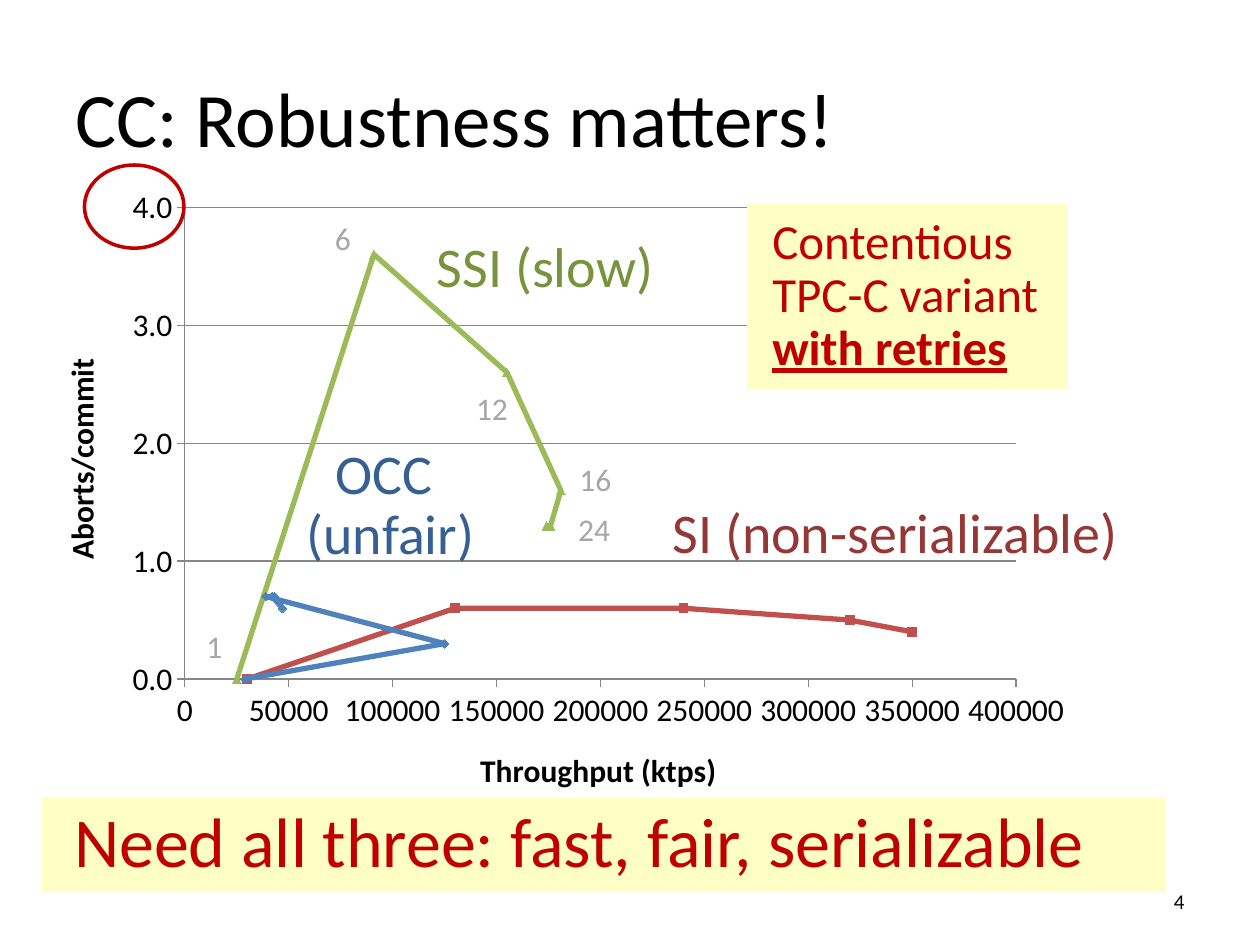
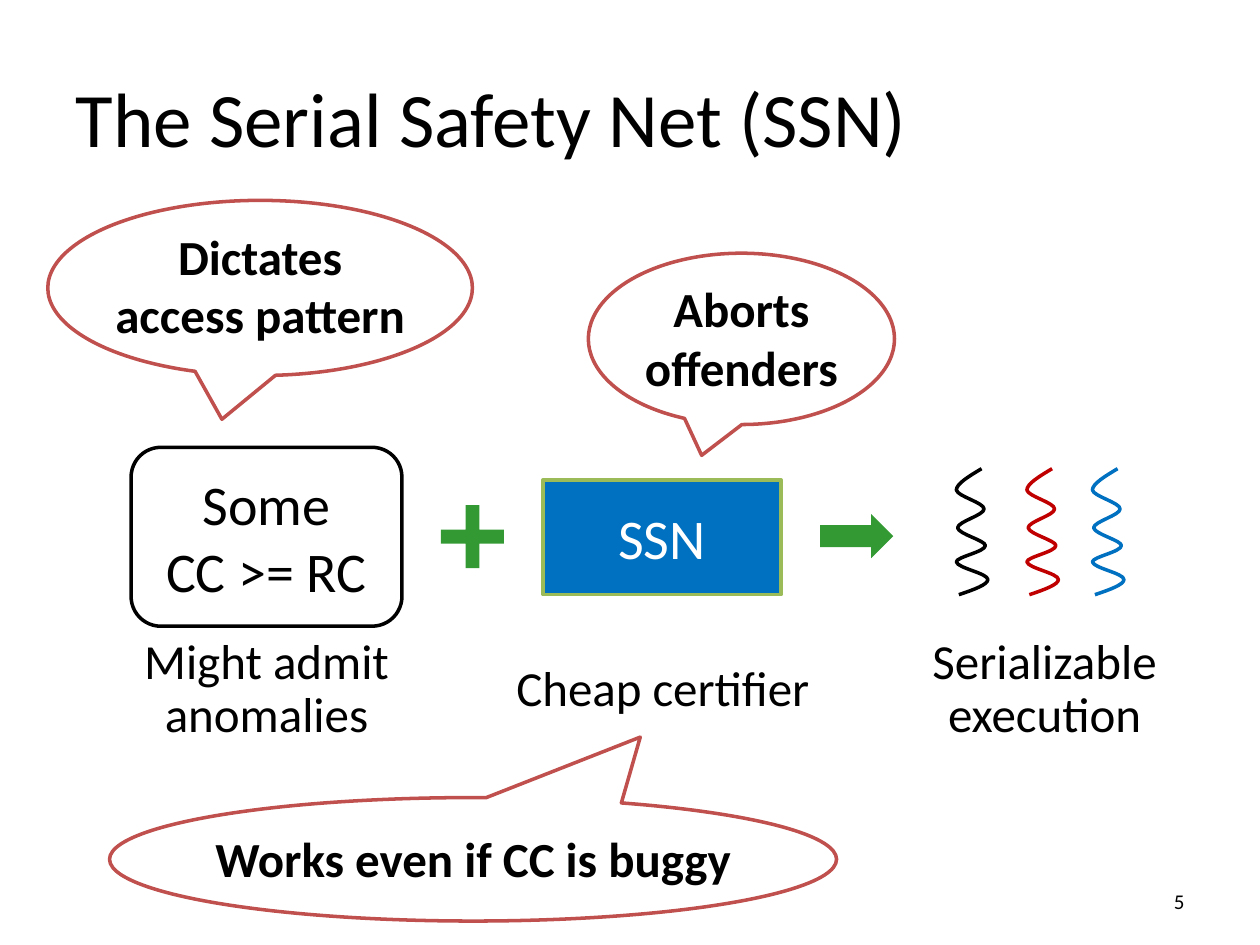
"""Build two slides on concurrency control: robustness and the Serial Safety Net."""
from lxml import etree
from pptx import Presentation
from pptx.chart.data import XyChartData
from pptx.dml.color import RGBColor
from pptx.enum.chart import XL_CHART_TYPE, XL_MARKER_STYLE, XL_TICK_MARK
from pptx.enum.shapes import MSO_SHAPE
from pptx.enum.text import MSO_ANCHOR, PP_ALIGN
from pptx.oxml.ns import qn
from pptx.util import Inches, Pt

FONT = "Calibri"
BLACK = RGBColor(0x00, 0x00, 0x00)
WHITE = RGBColor(0xFF, 0xFF, 0xFF)
GRAY = RGBColor(0xA6, 0xA6, 0xA6)
GRID = RGBColor(0x86, 0x86, 0x86)
RED = RGBColor(0xC0, 0x00, 0x00)
BLUE = RGBColor(0x00, 0x70, 0xC0)
GREEN = RGBColor(0x33, 0x99, 0x33)
YELLOW = RGBColor(0xFF, 0xFF, 0xC5)
OCC_LINE = RGBColor(0x4F, 0x81, 0xBD)
SI_LINE = RGBColor(0xC0, 0x50, 0x4D)
SSI_LINE = RGBColor(0x9B, 0xBB, 0x59)
OCC_TEXT = RGBColor(0x37, 0x60, 0x92)
SI_TEXT = RGBColor(0x95, 0x37, 0x35)
SSI_TEXT = RGBColor(0x77, 0x93, 0x3C)


def write(sp, text, size=18, color=BLACK, bold=False, align=PP_ALIGN.LEFT,
          anchor=MSO_ANCHOR.MIDDLE, spacing=1.0, margins=(0.1, 0.05), wrap=True):
    """Fill a shape with formatted text and return its last paragraph."""
    tf = sp.text_frame
    tf.text = text
    tf.word_wrap = wrap
    tf.vertical_anchor = anchor
    tf.margin_left = tf.margin_right = Inches(margins[0])
    tf.margin_top = tf.margin_bottom = Inches(margins[1])
    for p in tf.paragraphs:
        p.alignment = align
        p.line_spacing = spacing
        for r in p.runs:
            r.font.name = FONT
            r.font.size = Pt(size)
            r.font.bold = bold
            r.font.color.rgb = color
    return p


def add_box(s, at, kind=None, fill=None, line=None, adj=()):
    """Add a preset shape, or a text box when no kind is given."""
    box = [Inches(v) for v in at]
    if kind is None:
        return s.shapes.add_textbox(*box)
    sp = s.shapes.add_shape(kind, *box)
    sp.shadow.inherit = False
    for i, value in enumerate(adj):
        sp.adjustments[i] = value
    if fill is None:
        sp.fill.background()
    else:
        sp.fill.solid()
        sp.fill.fore_color.rgb = fill
    if line is None:
        sp.line.fill.background()
    else:
        sp.line.color.rgb = line
        sp.line.width = Pt(2)
    return sp


prs = Presentation()
prs.slide_width, prs.slide_height = Inches(10), Inches(7.5)

slides = []
for number, title in ((4, "CC: Robustness matters!"), (5, "The Serial Safety Net (SSN)")):
    s = prs.slides.add_slide(prs.slide_layouts[5])
    sp = s.shapes.title
    sp.left, sp.top, sp.width, sp.height = [Inches(v) for v in (0.5, 0.3, 9, 1.25)]
    write(sp, title, size=44)
    write(add_box(s, (7.17, 6.95, 2.33, 0.4)), str(number), size=12, align=PP_ALIGN.RIGHT)
    slides.append(s)
robustness, safety_net = slides

curves = (
    ("Series 1", OCC_LINE, XL_MARKER_STYLE.DIAMOND,
     (29000, 125000, 39000, 43000, 47000, 42000), (0, 0.3, 0.7, 0.7, 0.6, 0.7)),
    ("Series 2", SI_LINE, XL_MARKER_STYLE.SQUARE,
     (30000, 130000, 240000, 320000, 350000, 350000), (0, 0.6, 0.6, 0.5, 0.4, 0.4)),
    ("Series 3", SSI_LINE, XL_MARKER_STYLE.TRIANGLE,
     (25000, 91000, 155000, 181000, 176000, 174000), (0, 3.6, 2.6, 1.6, 1.3, 1.3)),
)
data = XyChartData()
for name, _, _, throughputs, aborts in curves:
    series = data.add_series(name)
    for x, y in zip(throughputs, aborts):
        series.add_data_point(x, y)
chart = robustness.shapes.add_chart(
    XL_CHART_TYPE.XY_SCATTER_LINES, *[Inches(v) for v in (0.12, 1.34, 8.58, 5.35)], data).chart
chart.has_title = chart.has_legend = False
chart.plots[0].vary_by_categories = False
chart.font.name, chart.font.size = FONT, Pt(18)
chart.font.color.rgb = BLACK
for series, (_, color, marker, _, _) in zip(chart.plots[0].series, curves):
    series.smooth = False
    series.format.line.color.rgb = color
    series.format.line.width = Pt(3)
    series.marker.style, series.marker.size = marker, 5
    series.marker.format.fill.solid()
    series.marker.format.fill.fore_color.rgb = color
    series.marker.format.line.color.rgb = color

axes = ((chart.category_axis, "Throughput (ktps)", 400000, 50000, "General"),
        (chart.value_axis, "Aborts/commit", 4, 1, "#,##0.0"))
for axis, title, top, step, number_format in axes:
    axis.minimum_scale, axis.maximum_scale, axis.major_unit = 0, top, step
    axis.major_tick_mark = XL_TICK_MARK.OUTSIDE
    axis.minor_tick_mark = XL_TICK_MARK.NONE
    axis.tick_labels.number_format = number_format
    axis.tick_labels.number_format_is_linked = False
    axis.format.line.color.rgb = GRID
    axis.has_major_gridlines = axis is axes[1][0]
    tf = axis.axis_title.text_frame
    tf.text = title
    font = tf.paragraphs[0].runs[0].font
    font.name, font.size, font.bold = FONT, Pt(18), True
    font.color.rgb = BLACK
chart.value_axis.major_gridlines.format.line.color.rgb = GRID

plot_area = chart._chartSpace.find(".//" + qn("c:plotArea"))
body = plot_area.findall(qn("c:valAx"))[1].find(qn("c:title")).find(".//" + qn("a:bodyPr"))
body.set("rot", "-5400000")
body.set("vert", "horz")
for layout in plot_area.findall(qn("c:layout")):
    plot_area.remove(layout)
layout = etree.Element(qn("c:layout"))
manual = etree.SubElement(layout, qn("c:manualLayout"))
for tag, value in (("layoutTarget", "inner"), ("xMode", "edge"), ("yMode", "edge"),
                   ("x", "0.157"), ("y", "0.057"), ("w", "0.769"), ("h", "0.7")):
    etree.SubElement(manual, qn("c:" + tag)).set("val", value)
plot_area.insert(0, layout)

for text, at, color, align in (
        ("OCC \v(unfair)", (2.32, 3.44, 1.56, 1.17), OCC_TEXT, PP_ALIGN.CENTER),
        ("SI (non-serializable)", (5.24, 3.91, 3.78, 0.69), SI_TEXT, PP_ALIGN.LEFT),
        ("SSI (slow)", (3.37, 1.8, 1.94, 0.69), SSI_TEXT, PP_ALIGN.LEFT)):
    write(add_box(robustness, at), text, size=32, color=color, align=align,
          anchor=MSO_ANCHOR.TOP, spacing=0.9, margins=(0.1, 0.1), wrap=False)

for threads, left, top in ((24, 4.49, 4), (16, 4.5, 3.6), (6, 2.56, 1.69),
                           (12, 3.68, 3.04), (1, 1.54, 4.93)):
    width = 0.46 if threads > 9 else 0.33
    write(add_box(robustness, (left, top, width, 0.4)), str(threads), color=GRAY,
          anchor=MSO_ANCHOR.TOP, wrap=False)

sp = add_box(robustness, (0.33, 6.33, 8.92, 0.75), MSO_SHAPE.RECTANGLE, YELLOW)
write(sp, "Need all three: fast, fair, serializable", size=40, color=RED,
      spacing=0.9, margins=(0.26, 0.05))

sp = add_box(robustness, (5.93, 1.62, 2.54, 1.47), MSO_SHAPE.RECTANGLE, YELLOW)
p = write(sp, "Contentious \vTPC-C variant\v", size=28, color=RED, spacing=0.9,
          margins=(0.2, 0.1), wrap=False)
r = p.add_run()
r.text = "with retries"
r.font.name, r.font.size, r.font.bold, r.font.underline = FONT, Pt(28), True, True
r.font.color.rgb = RED

add_box(robustness, (0.67, 1.31, 0.79, 0.66), MSO_SHAPE.OVAL, line=RED)

sp = add_box(safety_net, (1.04, 3.55, 2.15, 1.42), MSO_SHAPE.ROUNDED_RECTANGLE, WHITE, BLACK)
write(sp, "Some\nCC >= RC", size=32, align=PP_ALIGN.CENTER)
add_box(safety_net, (3.5, 4.01, 0.5, 0.5), MSO_SHAPE.CROSS, GREEN, adj=(0.39,))
sp = add_box(safety_net, (4.31, 3.81, 1.89, 0.91), MSO_SHAPE.RECTANGLE, BLUE, SSI_LINE)
write(sp, "SSN", size=32, color=WHITE, align=PP_ALIGN.CENTER, margins=(0, 0.05))
add_box(safety_net, (6.51, 4.08, 0.58, 0.35), MSO_SHAPE.RIGHT_ARROW, GREEN)

wave = ((0.2, 0), (0.1, 0.06), (0, 0.12), (0, 0.17), (0.01, 0.22), (0.22, 0.27), (0.22, 0.32),
        (0.22, 0.37), (0.01, 0.42), (0.01, 0.47), (0.02, 0.52), (0.23, 0.57), (0.23, 0.61),
        (0.23, 0.66), (0, 0.7), (0, 0.74), (0.01, 0.79), (0.25, 0.83), (0.25, 0.88),
        (0.25, 0.92), (0.14, 0.96), (0.02, 1))
for left, color in ((7.59, BLACK), (8.15, RED), (8.67, BLUE)):
    thread = [(Inches(left + x), Inches(3.72 + y)) for x, y in wave]
    builder = safety_net.shapes.build_freeform(*thread[0])
    builder.add_line_segments(thread[1:], close=False)
    sp = builder.convert_to_shape()
    outline = sp._element.find(".//" + qn("a:path"))
    segments = outline.findall(qn("a:lnTo"))
    for i in range(0, len(segments), 3):
        curve = etree.SubElement(outline, qn("a:cubicBezTo"))
        for segment in segments[i:i + 3]:
            curve.append(segment[0])
            outline.remove(segment)
    sp.shadow.inherit = False
    sp.fill.background()
    sp.line.color.rgb = color
    sp.line.width = Pt(2)

for text, left, width in (("Serializable execution", 7.25, 2.08),
                          ("Might admit anomalies", 1.04, 2.15),
                          ("Cheap certifier", 3.8, 2.92)):
    write(add_box(safety_net, (left, 5.13, width, 0.7)), text, size=28,
          align=PP_ALIGN.CENTER, spacing=0.9)

for text, at, tip, margin, wrap in (
        ("Works even if CC is buggy", (0.87, 6.33, 5.77, 0.98), (0.23, -0.99), 0.1, False),
        ("Aborts offenders", (4.67, 2.01, 2.43, 1.36), (-0.13, 0.68), 0, True),
        ("Dictates access pattern", (0.38, 1.59, 3.37, 1.39), (-0.09, 0.75), 0, True)):
    sp = add_box(safety_net, at, MSO_SHAPE.OVAL_CALLOUT, WHITE, SI_LINE, tip)
    write(sp, text, size=28, bold=True, align=PP_ALIGN.CENTER, anchor=MSO_ANCHOR.TOP,
          margins=(margin, margin), wrap=wrap)

prs.save("out.pptx")
